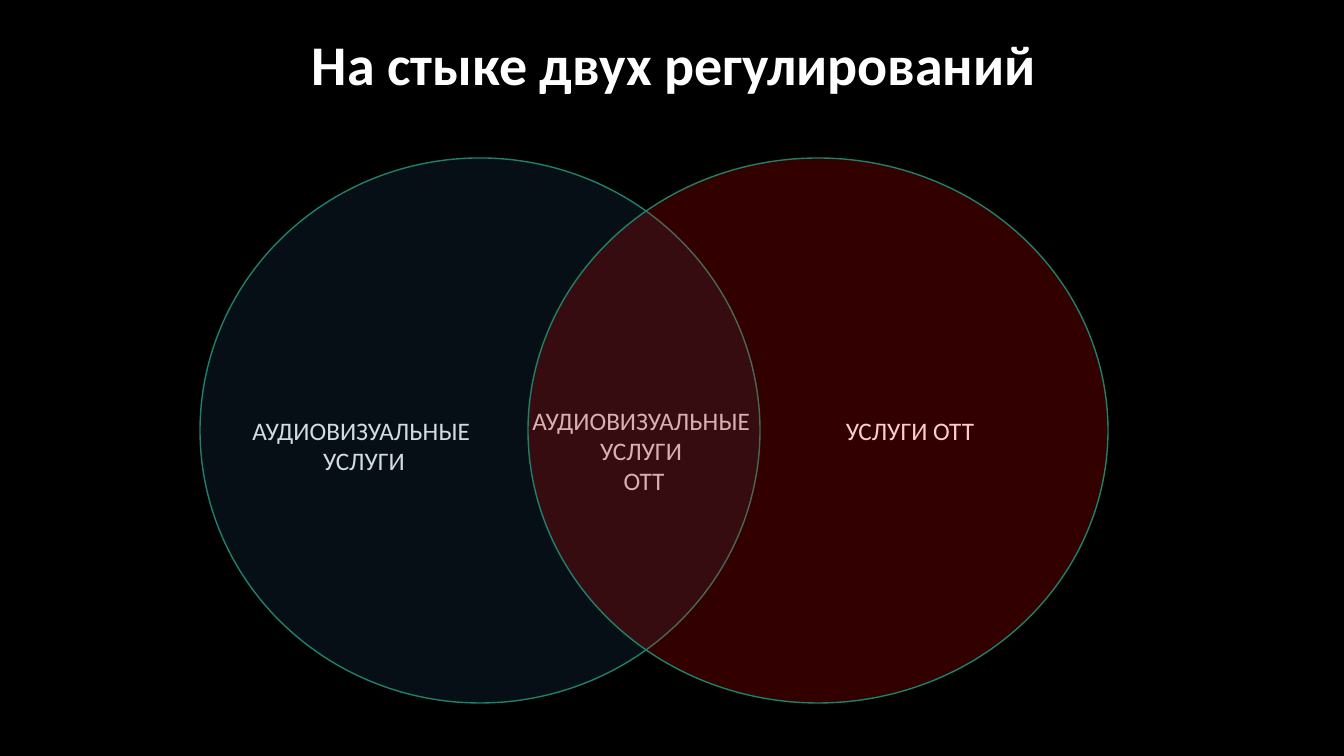
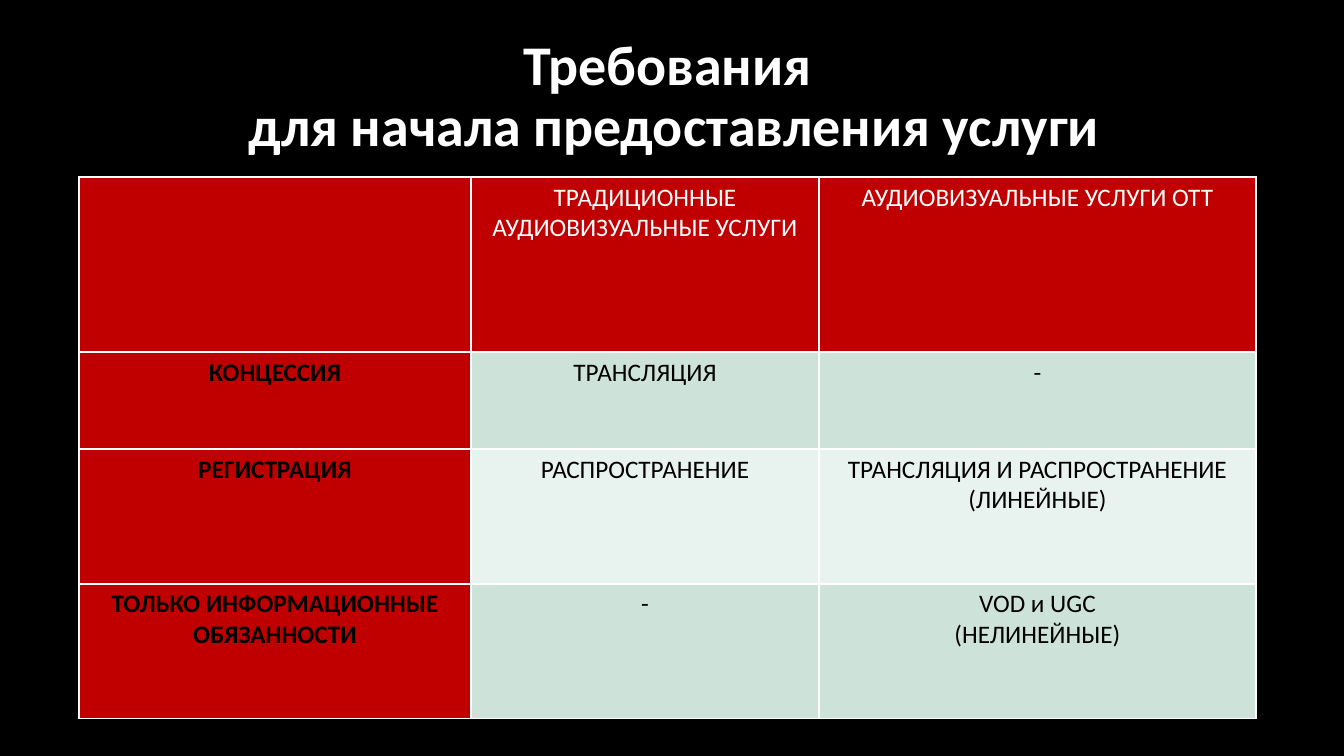
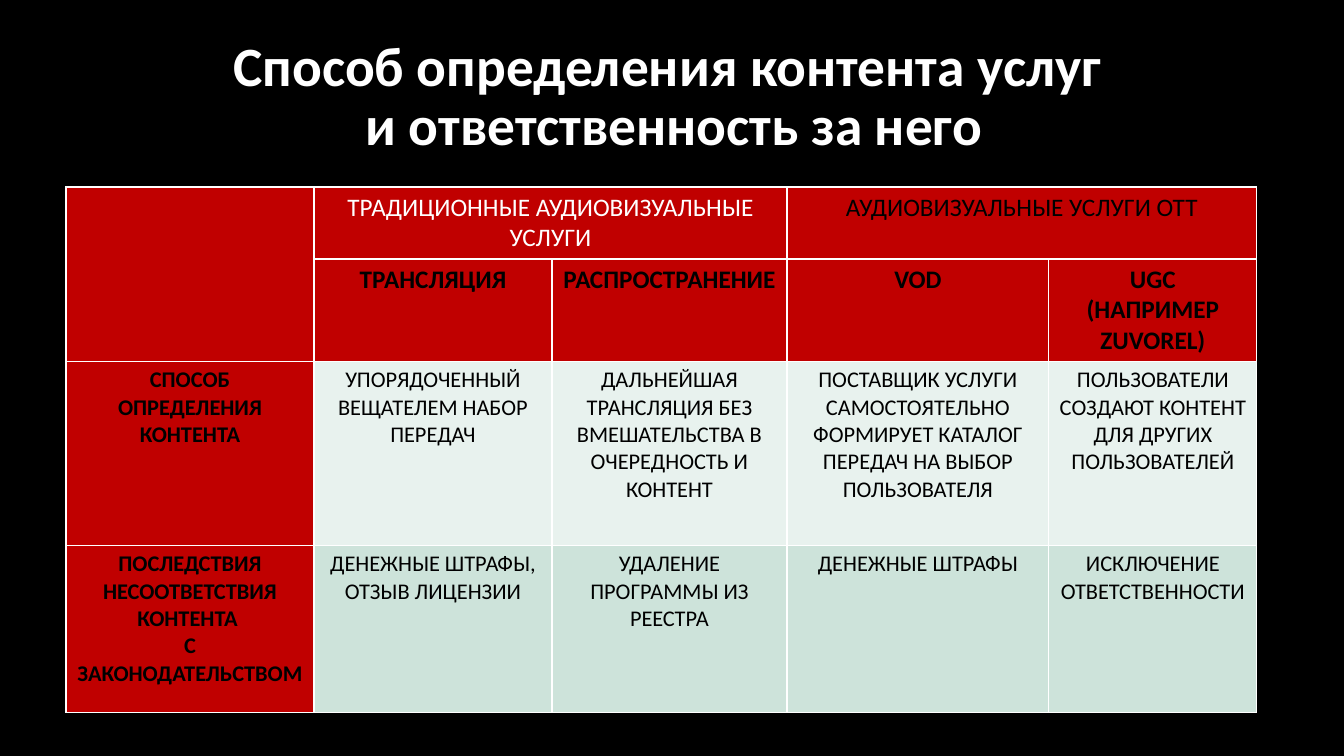
from lxml import etree
from pptx import Presentation
from pptx.dml.color import RGBColor
from pptx.enum.shapes import MSO_SHAPE
from pptx.enum.text import MSO_ANCHOR, MSO_AUTO_SIZE, PP_ALIGN
from pptx.oxml.ns import qn
from pptx.util import Pt

# Shared style
EMU_PER_PX = 914400 / 100.8
FONT = "Calibri"
BLACK = RGBColor(0x00, 0x00, 0x00)
WHITE = RGBColor(0xFF, 0xFF, 0xFF)
RED = RGBColor(0xC0, 0x00, 0x00)
MINT = RGBColor(0xCD, 0xE3, 0xDA)
PALE_MINT = RGBColor(0xE8, 0xF2, 0xEE)
BLUE = RGBColor(0x1C, 0x4F, 0x69)
BRIGHT_RED = RGBColor(0xFF, 0x00, 0x00)
GREEN = RGBColor(0x1E, 0x81, 0x68)
CENTER = PP_ALIGN.CENTER
MIDDLE = MSO_ANCHOR.MIDDLE
NO_FIT = MSO_AUTO_SIZE.NONE
ELLIPSE = MSO_SHAPE.OVAL
TITLE_ONLY = 5


def px(length):
    return round(length * EMU_PER_PX)


def emu_box(box):
    return [px(length) for length in box]


def write(frame, text, size, color, bold=False, spacing=None):
    """Fill a text frame with centred paragraphs of one style."""
    frame.text = text
    for para in frame.paragraphs:
        para.alignment = CENTER
        para.line_spacing = spacing
        font = para.font
        font.name, font.size, font.bold = FONT, Pt(size), bold
        font.color.rgb = color


def add_page(deck, title, height, size=40):
    page = deck.slides.add_slide(deck.slide_layouts[TITLE_ONLY])
    holder = page.shapes.title
    holder.left, holder.top, holder.width, holder.height = emu_box((79, 28, 1190, height))
    frame = holder.text_frame
    frame.word_wrap = True
    frame.auto_size = NO_FIT
    frame.vertical_anchor = MIDDLE
    write(frame, title, size, WHITE, bold=True, spacing=0.9)
    return page


def add_label(page, box, text):
    frame = page.shapes.add_textbox(*emu_box(box)).text_frame
    frame.word_wrap = True
    write(frame, text, 18, WHITE)


def add_circle(page, box, color):
    circle = page.shapes.add_shape(ELLIPSE, *emu_box(box))
    circle.shadow.inherit = False
    circle.fill.solid()
    circle.fill.fore_color.rgb = color
    circle.line.color.rgb = GREEN
    circle.line.width = Pt(1)
    # 20 % opacity
    tint = circle.fill._xPr.find(qn("a:solidFill"))[0]
    etree.SubElement(tint, qn("a:alpha"), val="20000")


def add_venn(page, box):
    """Two overlapping circles laid over three labels."""
    left, top, width, height = box
    middle = top + 252
    add_label(page, (left + 41, middle, 246, 72), "АУДИОВИЗУАЛЬНЫЕ \nУСЛУГИ")
    add_label(page, (left + 625, middle, 170, 40), "УСЛУГИ OTT")
    add_label(page, (left + 108, middle - 10, 672, 102), "АУДИОВИЗУАЛЬНЫЕ \nУСЛУГИ \nOTT")
    add_circle(page, (left, top, 560, height), BLUE)
    add_circle(page, (left + width - 580, top, 580, height), BRIGHT_RED)


def add_borders(cell):
    properties = cell._tc.get_or_add_tcPr()
    for index, side in enumerate(("a:lnL", "a:lnR", "a:lnT", "a:lnB")):
        line = etree.Element(qn(side), w=str(Pt(1)))
        fill = etree.SubElement(line, qn("a:solidFill"))
        etree.SubElement(fill, qn("a:srgbClr"), val=str(WHITE))
        properties.insert(index, line)


def add_grid(page, corner, columns, rows, texts, header_rows=1, body_size=18,
             merges=(), dark_headers=()):
    """Table with red header rows and first column, and a banded body."""
    box = (*corner, sum(columns), sum(rows))
    table = page.shapes.add_table(len(rows), len(columns), *emu_box(box)).table
    table.first_row = table.horz_banding = False
    for column, width in zip(table.columns, columns):
        column.width = px(width)
    for row, height in zip(table.rows, rows):
        row.height = px(height)

    for r, line in enumerate(texts):
        for c, text in enumerate(line):
            cell = table.cell(r, c)
            is_header = r < header_rows or c == 0
            cell.fill.solid()
            cell.fill.fore_color.rgb = RED if is_header else (MINT if r % 2 else PALE_MINT)
            add_borders(cell)
            if text:
                color = WHITE if r == 0 and c not in dark_headers else BLACK
                size = 18 if r < header_rows else body_size
                write(cell.text_frame, text, size, color, bold=is_header and r > 0)

    for first, last in merges:
        table.cell(*first).merge(table.cell(*last))


REQUIREMENTS = [
    ["", "ТРАДИЦИОННЫЕ АУДИОВИЗУАЛЬНЫЕ УСЛУГИ", "АУДИОВИЗУАЛЬНЫЕ УСЛУГИ OTT"],
    ["КОНЦЕССИЯ", "ТРАНСЛЯЦИЯ", "-"],
    ["РЕГИСТРАЦИЯ", "РАСПРОСТРАНЕНИЕ", "ТРАНСЛЯЦИЯ И РАСПРОСТРАНЕНИЕ\n(ЛИНЕЙНЫЕ)"],
    ["ТОЛЬКО ИНФОРМАЦИОННЫЕ ОБЯЗАННОСТИ", "-", "VOD и UGC\n(НЕЛИНЕЙНЫЕ)"],
]
LIABILITY = [
    ["", "ТРАДИЦИОННЫЕ АУДИОВИЗУАЛЬНЫЕ УСЛУГИ", "", "АУДИОВИЗУАЛЬНЫЕ УСЛУГИ OTT", ""],
    ["", "ТРАНСЛЯЦИЯ", "РАСПРОСТРАНЕНИЕ", "VOD", "UGC\n(НАПРИМЕР ZUVOREL)"],
    ["СПОСОБ ОПРЕДЕЛЕНИЯ КОНТЕНТА",
     "УПОРЯДОЧЕННЫЙ ВЕЩАТЕЛЕМ НАБОР ПЕРЕДАЧ",
     "ДАЛЬНЕЙШАЯ ТРАНСЛЯЦИЯ БЕЗ ВМЕШАТЕЛЬСТВА В ОЧЕРЕДНОСТЬ И КОНТЕНТ",
     "ПОСТАВЩИК УСЛУГИ САМОСТОЯТЕЛЬНО\nФОРМИРУЕТ КАТАЛОГ ПЕРЕДАЧ НА ВЫБОР ПОЛЬЗОВАТЕЛЯ",
     "ПОЛЬЗОВАТЕЛИ СОЗДАЮТ КОНТЕНТ ДЛЯ ДРУГИХ ПОЛЬЗОВАТЕЛЕЙ"],
    ["ПОСЛЕДСТВИЯ НЕСООТВЕТСТВИЯ КОНТЕНТА \nС ЗАКОНОДАТЕЛЬСТВОМ",
     "ДЕНЕЖНЫЕ ШТРАФЫ, ОТЗЫВ ЛИЦЕНЗИИ",
     "УДАЛЕНИЕ ПРОГРАММЫ ИЗ РЕЕСТРА",
     "ДЕНЕЖНЫЕ ШТРАФЫ",
     "ИСКЛЮЧЕНИЕ ОТВЕТСТВЕННОСТИ"],
]


def main():
    deck = Presentation()
    deck.slide_width, deck.slide_height = px(1344), px(756)
    backdrop = deck.slide_master.background.fill
    backdrop.solid()
    backdrop.fore_color.rgb = BLACK

    # Overlap of the two regulations
    page = add_page(deck, "На стыке двух регулирований", 79)
    add_venn(page, (200, 158, 908, 545))

    # Requirements for starting a service
    page = add_page(deck, "Требования \vдля начала предоставления услуги", 140)
    add_grid(page, (79, 177), (392, 348, 437), (175, 97, 135, 135), REQUIREMENTS)

    # Content and liability
    page = add_page(deck, "Способ определения контента услуг \vи ответственность за него",
                    140, size=39.6)
    add_grid(page, (66, 187), (248, 238, 235, 262, 208), (72, 102, 184, 167), LIABILITY,
             header_rows=2, body_size=16, dark_headers=(3,),
             merges=(((0, 0), (1, 0)), ((0, 1), (0, 2)), ((0, 3), (0, 4))))

    deck.save("out.pptx")


if __name__ == "__main__":
    main()
